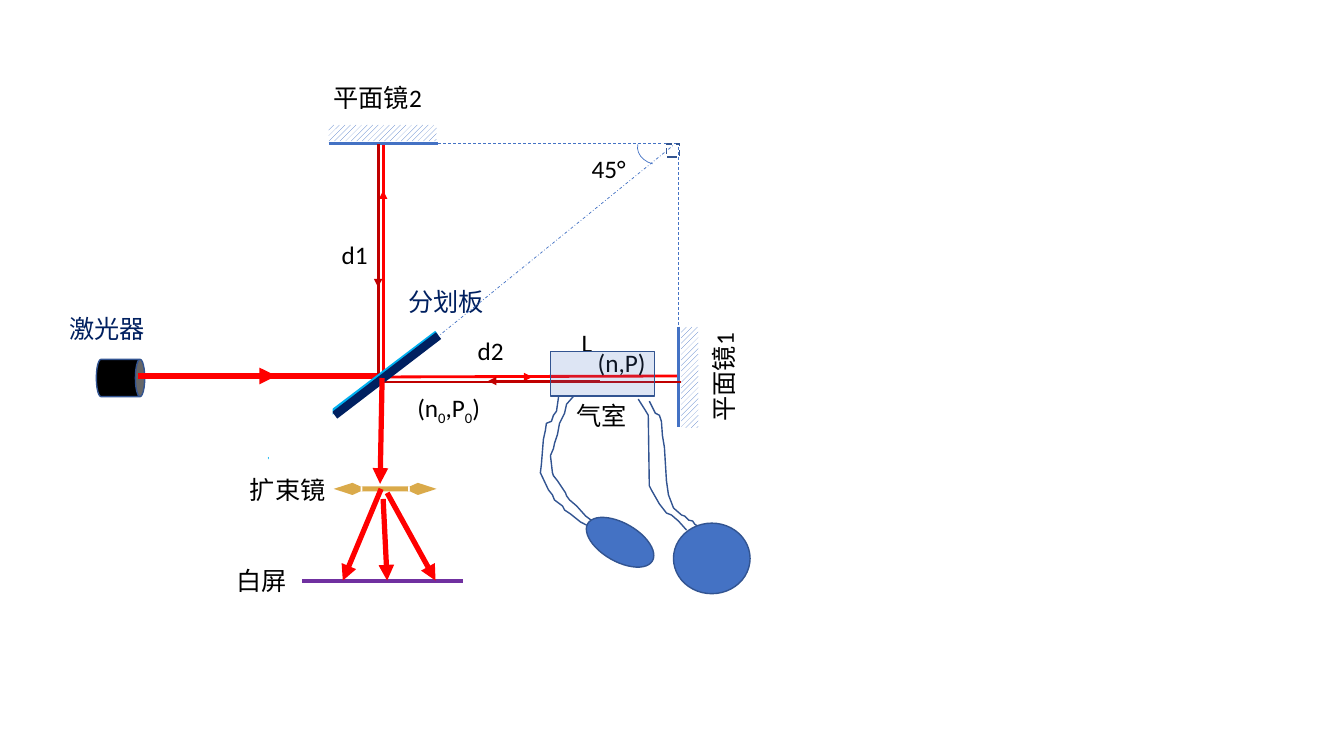
"""Draw an interferometer with a gas cell in one arm."""
import pptx
import pptx.dml.color
import pptx.enum.dml
import pptx.enum.shapes
import pptx.enum.text
import pptx.util
from lxml import etree
from pptx.oxml.ns import qn

COLORS = {
    "blue": "4472C4", "outline": "325491", "navy": "002060", "cyan": "00B0F0",
    "red": "FF0000", "crimson": "C00000", "purple": "7030A0", "gold": "D69F32",
    "black": "000000", "white": "FFFFFF",
}
SHAPE = pptx.enum.shapes.MSO_SHAPE
DASH = pptx.enum.dml.MSO_LINE.DASH
DASH_DOT = pptx.enum.dml.MSO_LINE.DASH_DOT


def rgb(name):
    return pptx.dml.color.RGBColor.from_string(COLORS[name])


def set_alpha(fill_owner, percent):
    color = next(fill_owner.iter(qn("a:srgbClr")))
    etree.SubElement(color, qn("a:alpha"), val=str(percent * 1000))


class Bench:
    """Hold the style, the grid and the current slide."""

    columns, rows = 1333, 750
    text_format = {"size": pptx.util.Pt(18), "name": "Calibri"}

    def __init__(self):
        self.deck = pptx.Presentation()
        self.deck.slide_width = pptx.util.Inches(13.33)
        self.deck.slide_height = pptx.util.Inches(7.5)
        self.slide = self.deck.slides.add_slide(self.deck.slide_layouts[6])

    def place(self, *lengths):
        units = (self.deck.slide_width / self.columns, self.deck.slide_height / self.rows)
        return [round(length * units[i % 2]) for i, length in enumerate(lengths)]

    def stroke(self, line, color, width, dash=None):
        line.color.rgb = rgb(color)
        settings = {"width": pptx.util.Pt(width), "dash_style": dash}
        for attribute, value in settings.items():
            setattr(line, attribute, value)

    def ray(self, ends, color, width, dash=None, arrow=False):
        ray = self.slide.shapes.add_connector(
            pptx.enum.shapes.MSO_CONNECTOR.STRAIGHT, *self.place(*ends))
        self.stroke(ray.line, color, width, dash)
        etree.SubElement(ray._element.spPr, qn("a:effectLst"))
        if arrow:
            etree.SubElement(ray.line._get_or_add_ln(), qn("a:tailEnd"), type="triangle")
        return ray

    def lens(self, ends, color, width):
        outline = self.ray(ends, color, width).line._get_or_add_ln()
        set_alpha(outline, 88)
        for end in ("a:headEnd", "a:tailEnd"):
            etree.SubElement(outline, qn(end), type="arrow", w="sm", len="lg")

    def device(self, kind, box, fill=None, line=None, turn=0, alpha=None, hatched=False):
        device = self.slide.shapes.add_shape(kind, *self.place(*box))
        device.shadow.inherit = False
        device.rotation = turn
        if hatched:
            device.fill.patterned()
            device.fill.pattern = pptx.enum.dml.MSO_PATTERN.WIDE_UPWARD_DIAGONAL
            device.fill.fore_color.rgb = rgb(fill)
            device.fill.back_color.rgb = rgb("white")
        elif fill:
            device.fill.solid()
            device.fill.fore_color.rgb = rgb(fill)
        else:
            device.fill.background()
        if alpha:
            set_alpha(device._element.spPr, alpha)
        if line:
            self.stroke(device.line, *line)
        else:
            device.line.fill.background()

    def tube(self, points):
        start, *rest = [self.place(*point) for point in points]
        builder = self.slide.shapes.build_freeform(*start, scale=1.0)
        builder.add_line_segments(rest, close=False)
        tube = builder.convert_to_shape()
        tube.shadow.inherit = False
        tube.fill.background()
        self.stroke(tube.line, "outline", 1)

    def label(self, box, *pieces, color="black", font="Calibri", turn=0):
        label = self.slide.shapes.add_textbox(*self.place(*box))
        label.rotation = turn
        sizing = pptx.enum.text.MSO_AUTO_SIZE
        frame_format = {
            "word_wrap": bool(turn),
            "auto_size": sizing.NONE if turn else sizing.SHAPE_TO_FIT_TEXT,
        }
        for attribute, value in frame_format.items():
            setattr(label.text_frame, attribute, value)
        for index, piece in enumerate(pieces):
            run = label.text_frame.paragraphs[0].add_run()
            run.text = piece
            for attribute, value in {**self.text_format, "name": font}.items():
                setattr(run.font, attribute, value)
            run.font.color.rgb = rgb(color)
            if index % 2:
                run._r.get_or_add_rPr().set("baseline", "-25000")


def draw_arms(bench):
    bench.device(SHAPE.CAN, (101, 351, 37, 48), "black", ("outline", 1), turn=90)
    for ends, color, width, arrow in (
        ((137, 373, 378, 373), "red", 4, False),
        ((204, 373, 274, 373), "red", 4, True),
        ((380, 274, 380, 189), "red", 2, True),
        ((380, 144, 380, 375), "red", 2, False),
        ((380, 374, 672, 373), "red", 2, False),
        ((441, 374, 528, 374), "red", 2, True),
    ):
        bench.ray(ends, color, width, arrow=arrow)
    for box, name in (((395, 279, 103, 40), "分划板"), ((59, 306, 103, 40), "激光器")):
        bench.label(box, name, color="navy", font="Times New Roman")
    for box, turn, face in (
        ((326, 124, 107, 16), 0, (326, 142, 434, 142)),
        ((634, 366, 100, 17), 90, (673, 324, 673, 424)),
    ):
        bench.device(SHAPE.RECTANGLE, box, "blue", turn=turn, hatched=True)
        bench.ray(face, "blue", 2)
    bench.ray((300, 576, 459, 576), "purple", 2.75)
    for ends, arrow in (
        ((375, 143, 375, 374), False), ((375, 200, 375, 285), True),
        ((675, 379, 372, 379), False), ((595, 378, 484, 378), True),
    ):
        bench.ray(ends, "crimson", 2, arrow=arrow)
    for box, name in (
        ((329, 233, 46, 40), "d1"), ((464, 328, 46, 40), "d2"),
        ((225, 556, 76, 40), "白屏"), ((321, 77, 117, 40), "平面镜2"),
    ):
        bench.label(box, name)
    bench.label((665, 352, 109, 43), "平面镜1", turn=270)


def draw_angle(bench):
    bench.ray((415, 142, 674, 142), "blue", 0.5, DASH)
    bench.ray((673, 347, 673, 142), "blue", 0.5, DASH)
    bench.device(SHAPE.RECTANGLE, (661, 143, 13, 13), line=("outline", 1, DASH))
    bench.ray((433, 335, 668, 144), "blue", 0.5, DASH_DOT)
    bench.device(SHAPE.ARC, (632, 133, 38, 30), line=("blue", 0.5), turn=194.5)
    bench.label((577, 147, 76, 40), "45°")


def draw_screen_side(bench):
    bench.lens((331, 485, 433, 485), "gold", 3.5)
    bench.label((238, 466, 103, 40), "扩束镜")
    bench.ray((267, 456, 433, 330), "cyan", 3.25)
    bench.ray((435, 333, 332, 412), "navy", 6)
    bench.device(SHAPE.RECTANGLE, (267, 401, 63, 74), "white")
    for ends in ((378, 485, 340, 576), (384, 489, 432, 576),
                 (379, 375, 377, 480), (380, 495, 384, 576)):
        bench.ray(ends, "red", 3.75, arrow=True)


def draw_gas_cell(bench):
    bench.label((567, 320, 31, 40), "L")
    bench.label((404, 384, 85, 40), "(n", "0", ",P", "0", ")")
    bench.label((583, 340, 68, 40), "(n,P)")
    bench.label((562, 392, 71, 40), "气室")
    bench.device(SHAPE.RECTANGLE, (546, 349, 103, 44), "blue", ("outline", 1), alpha=18)
    bench.tube([(554, 394), (552, 408), (549, 412), (547, 418), (542, 420), (541, 427),
                (539, 436), (537, 461), (536, 469), (544, 486), (548, 491), (550, 496),
                (558, 502), (560, 506), (566, 510), (576, 518), (582, 521)])
    bench.tube([(569, 393), (562, 401), (560, 410), (555, 420), (553, 431), (550, 440),
                (549, 445), (546, 452), (548, 469), (549, 472), (553, 477), (555, 480),
                (561, 489), (562, 492), (565, 496), (572, 502), (581, 512), (589, 518)])
    bench.device(SHAPE.OVAL, (578, 519, 74, 38), "blue", ("outline", 1), turn=29.8)
    bench.tube([(633, 396), (640, 407), (643, 412), (644, 482), (646, 486), (654, 500),
                (661, 509), (666, 511), (673, 517), (681, 526)])
    bench.tube([(644, 398), (650, 410), (654, 412), (656, 418), (657, 432), (659, 444),
                (661, 477), (663, 491), (668, 504), (676, 511), (679, 512), (683, 516),
                (687, 517), (689, 520), (692, 522)])
    bench.device(SHAPE.OVAL, (668, 519, 76, 70), "blue", ("outline", 1))


def main():
    bench = Bench()
    for draw in (draw_arms, draw_angle, draw_screen_side, draw_gas_cell):
        draw(bench)
    bench.deck.save("out.pptx")


if __name__ == "__main__":
    main()
